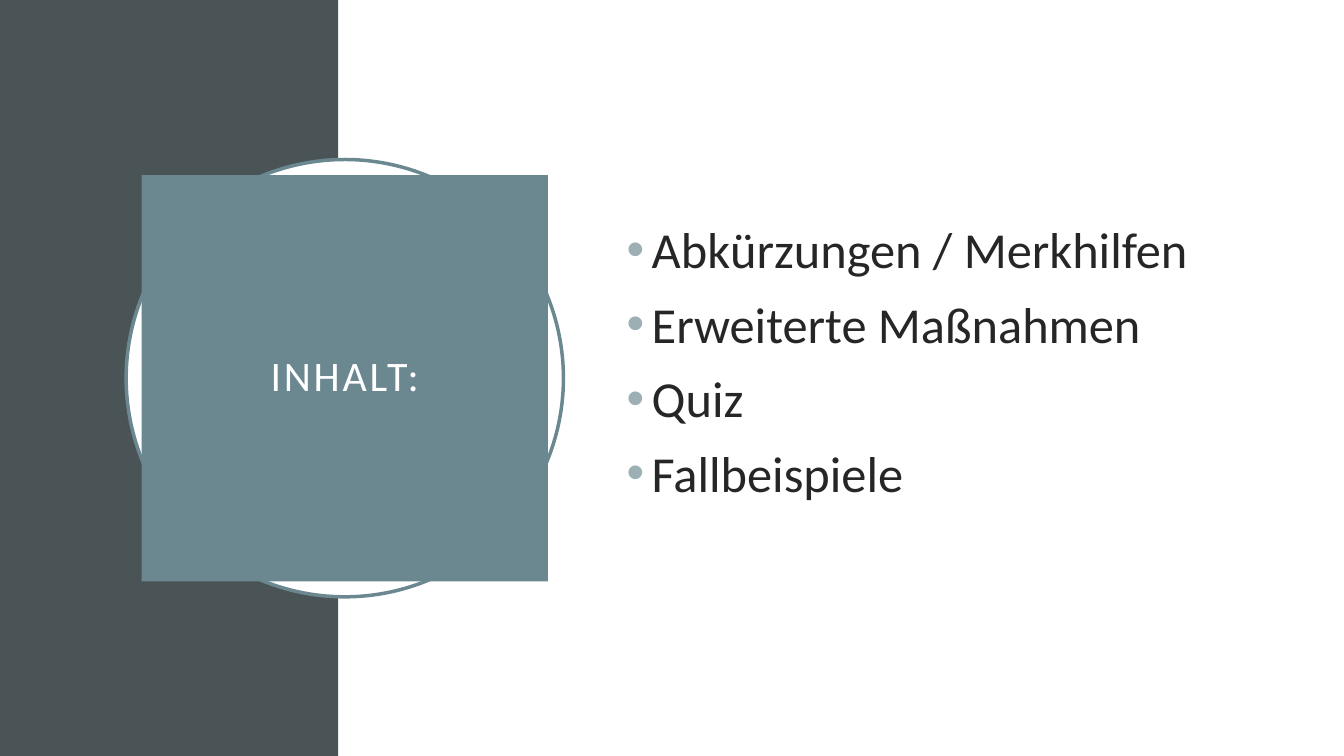
from lxml import etree
from pptx import Presentation
from pptx.dml.color import RGBColor
from pptx.enum.shapes import MSO_SHAPE
from pptx.enum.text import MSO_ANCHOR, MSO_AUTO_SIZE, PP_ALIGN
from pptx.oxml.ns import qn
from pptx.util import Cm, Pt

RECTANGLE, OVAL = MSO_SHAPE.RECTANGLE, MSO_SHAPE.OVAL
MIDDLE, NO_FIT = MSO_ANCHOR.MIDDLE, MSO_AUTO_SIZE.NONE
CENTER, LEFT = PP_ALIGN.CENTER, PP_ALIGN.LEFT

HEADING = "INHALT:"
TOPICS = [
    "Abkürzungen / Merkhilfen",
    "Erweiterte Maßnahmen",
    "Quiz",
    "Fallbeispiele",
]
FONT = "Calibri"
SLATE, TEAL, MIST = "4A5356", "6B8891", "9BAFB5"
WHITE, INK = "FFFFFF", "262626"

SLIDE_WIDTH, SLIDE_HEIGHT = 33.87, 19.05
BAND_WIDTH = 8.53
EMBLEM_X, EMBLEM_Y = 8.69, 9.53
RING_SIZE, HEADING_SIZE = 11.02, 10.24
TOPICS_BOX = (15.54, 3.89, 14.78, 11.25)
BULLET_INDENT = 0.63


def color(hex_value):
    return RGBColor.from_string(hex_value)


def fill(shape, hex_value):
    shape.fill.solid()
    shape.fill.fore_color.rgb = color(hex_value)


def apply(target, values):
    for name, value in values.items():
        setattr(target, name, value)


def place(shape, box):
    apply(shape, dict(zip(("left", "top", "width", "height"), map(Cm, box))))


def centered_square(size):
    return EMBLEM_X - size / 2, EMBLEM_Y - size / 2, size, size


def add_backdrop(slide, kind, box, hex_value):
    shape = slide.shapes.add_shape(kind, *map(Cm, box))
    shape.shadow.inherit = False
    fill(shape, hex_value)
    shape.line.fill.background()
    return shape


def write(paragraph, text, size, hex_value, layout):
    run = paragraph.add_run()
    run.text = text
    apply(run.font, {"name": FONT, "size": Pt(size), "bold": False})
    run.font.color.rgb = color(hex_value)
    apply(paragraph, layout)
    return run


def add_bullet(paragraph):
    properties = paragraph._p.get_or_add_pPr()
    properties.set("marL", str(Cm(BULLET_INDENT)))
    properties.set("indent", str(-Cm(BULLET_INDENT)))
    bullet_color = etree.SubElement(properties, qn("a:buClr"))
    etree.SubElement(bullet_color, qn("a:srgbClr"), val=MIST)
    etree.SubElement(properties, qn("a:buFont"), typeface="Arial")
    etree.SubElement(properties, qn("a:buChar"), char="•")


def main():
    deck = Presentation()
    apply(deck, {"slide_width": Cm(SLIDE_WIDTH), "slide_height": Cm(SLIDE_HEIGHT)})
    slide = deck.slides.add_slide(deck.slide_layouts[1])
    heading, topics = slide.placeholders

    add_backdrop(slide, RECTANGLE, (0, 0, BAND_WIDTH, SLIDE_HEIGHT), SLATE)
    add_backdrop(slide, RECTANGLE,
                 (BAND_WIDTH, 0, SLIDE_WIDTH - BAND_WIDTH, SLIDE_HEIGHT), WHITE)
    ring = add_backdrop(slide, OVAL, centered_square(RING_SIZE), WHITE)
    ring.line.color.rgb = color(TEAL)
    ring.line.width = Pt(2.5)

    tree = heading.element.getparent()
    frame_format = {"word_wrap": True, "auto_size": NO_FIT, "vertical_anchor": MIDDLE}
    for placeholder, box in ((heading, centered_square(HEADING_SIZE)),
                             (topics, TOPICS_BOX)):
        tree.append(placeholder.element)
        place(placeholder, box)
        apply(placeholder.text_frame, frame_format)

    fill(heading, TEAL)
    sides = ("margin_left", "margin_top", "margin_right", "margin_bottom")
    apply(heading.text_frame, dict.fromkeys(sides, Cm(0.5)))
    title_run = write(heading.text_frame.paragraphs[0], HEADING, 30, WHITE,
                      {"alignment": CENTER, "line_spacing": 0.9})
    title_run.font._element.set("spc", "200")

    topics.text_frame.margin_bottom = Cm(1)
    for index, topic in enumerate(TOPICS):
        frame = topics.text_frame
        paragraph = frame.add_paragraph() if index else frame.paragraphs[0]
        write(paragraph, topic, 36, INK,
              {"alignment": LEFT, "space_before": Pt(10), "space_after": Pt(0)})
        add_bullet(paragraph)

    deck.save("out.pptx")


if __name__ == "__main__":
    main()
